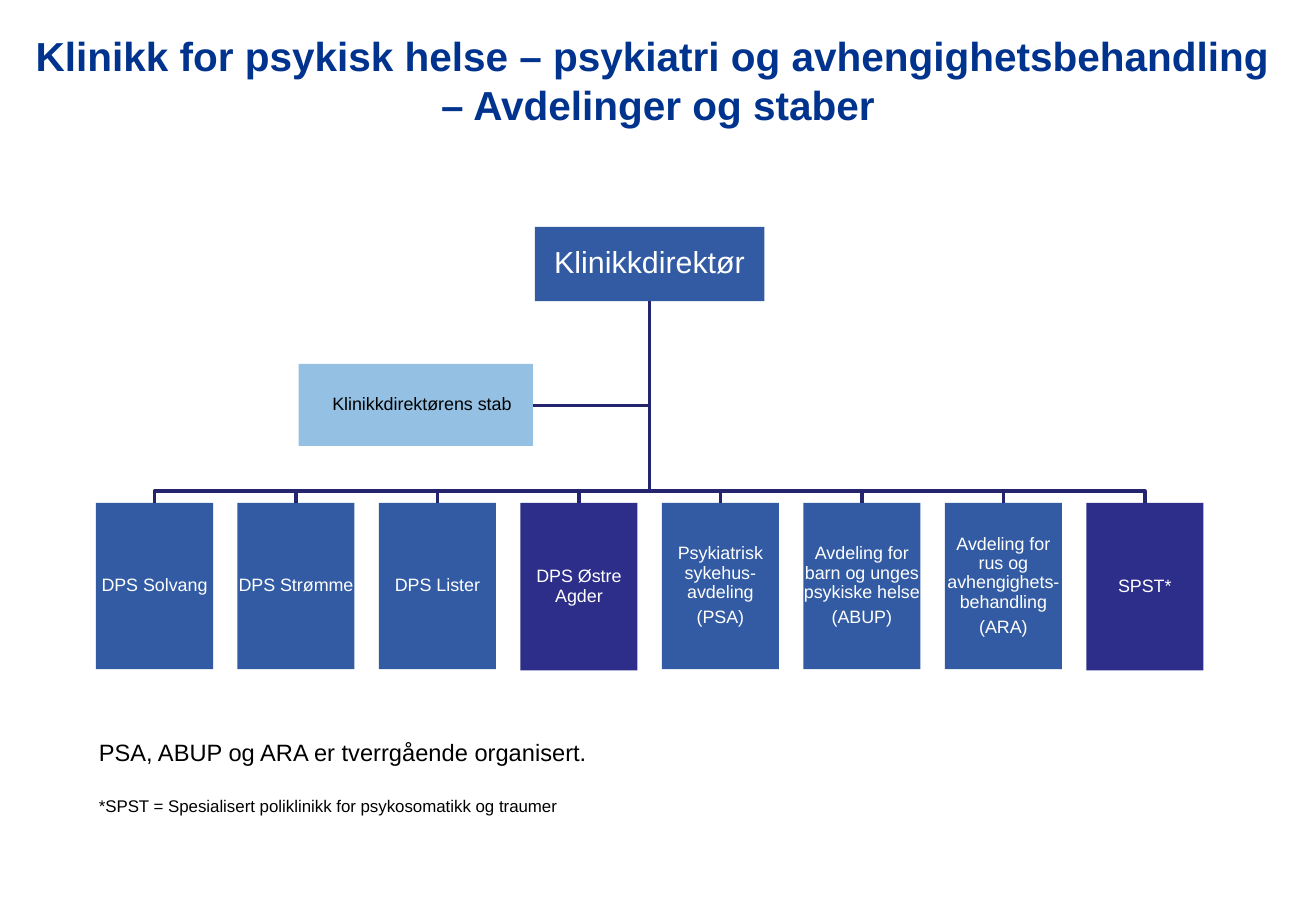
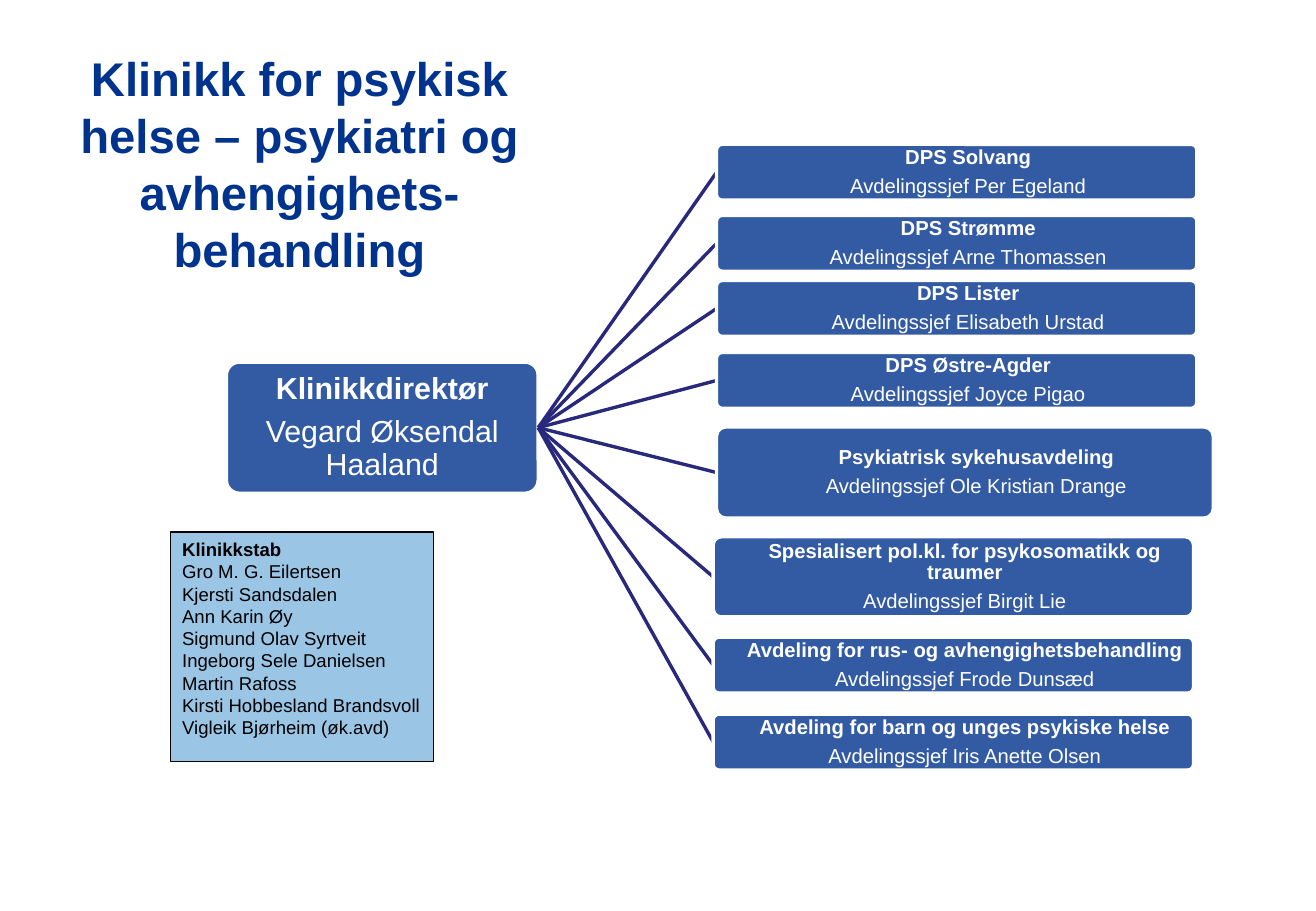
from lxml.etree import SubElement
from pptx import Presentation
from pptx.dml.color import RGBColor
from pptx.enum.shapes import MSO_CONNECTOR, MSO_SHAPE
from pptx.enum.text import MSO_ANCHOR, PP_ALIGN
from pptx.oxml.ns import qn
from pptx.util import Inches, Pt

SLIDE_WIDTH, SLIDE_HEIGHT = Inches(10.83), Inches(7.5)
FONT = "Arial"
COLORS = {
    "blue": "00338D", "violet": "2D2D8A", "sky": "7AB2DC",
    "tree": "24246F", "fan": "29297B", "white": "FFFFFF", "black": "000000",
}
SINGLE, TIGHT = 1.0, 0.9
AXIS = 49.37

DEPARTMENTS = [
    (["DPS Solvang"], "blue"),
    (["DPS Strømme"], "blue"),
    (["DPS Lister"], "blue"),
    (["DPS Østre Agder"], "violet"),
    (["Psykiatrisk sykehus-avdeling", "(PSA)"], "blue"),
    (["Avdeling for barn og unges psykiske helse", "(ABUP)"], "blue"),
    (["Avdeling for rus og avhengighets-behandling", "(ARA)"], "blue"),
    (["SPST*"], "violet"),
]
CHIEFS = [
    ("DPS Solvang", "Per Egeland", (54.45, 15.85, 36.5, 6.13)),
    ("DPS Strømme", "Arne Thomassen", (54.45, 23.65, 36.5, 6.13)),
    ("DPS Lister", "Elisabeth Urstad", (54.45, 30.8, 36.5, 6.13)),
    ("DPS Østre-Agder", "Joyce Pigao", (54.45, 38.7, 36.5, 6.13)),
    ("Psykiatrisk sykehusavdeling", "Ole Kristian Drange", (54.45, 46.87, 37.75, 10)),
    ("Spesialisert pol.kl. for psykosomatikk og traumer", "Birgit Lie",
     (54.2, 58.93, 36.5, 8.8)),
    ("Avdeling for rus- og avhengighetsbehandling", "Frode Dunsæd",
     (54.2, 69.95, 36.5, 6.13)),
    ("Avdeling for barn og unges psykiske helse", "Iris Anette Olsen",
     (54.2, 78.4, 36.5, 6.13)),
]
STAFF = [
    "Gro M. G. Eilertsen", "Kjersti Sandsdalen", "Ann Karin Øy",
    "Sigmund Olav Syrtveit", "Ingeborg Sele Danielsen", "Martin Rafoss",
    "Kirsti Hobbesland Brandsvoll", "Vigleik Bjørheim (øk.avd)",
]


def color(name):
    """Return a palette colour."""
    return RGBColor.from_string(COLORS[name])


def x(columns):
    """Turn hundredths of the slide width into a length."""
    return round(SLIDE_WIDTH * columns / 100)


def y(rows):
    """Turn hundredths of the slide height into a length."""
    return round(SLIDE_HEIGHT * rows / 100)


def place(area):
    """Turn a grid area into left, top, width and height."""
    left, top, width, height = area
    return x(left), y(top), x(width), y(height)


def write(paragraph, text, size, ink="black", bold=False, spacing=SINGLE,
          align=PP_ALIGN.LEFT, indent=0):
    """Fill one paragraph, breaking lines at newlines."""
    if indent:
        paragraph._p.get_or_add_pPr().set("marL", str(Inches(indent)))
    paragraph.alignment = align
    paragraph.line_spacing = spacing
    for number, line in enumerate(text.split("\n")):
        if number:
            paragraph.add_line_break()
        run = paragraph.add_run()
        run.text = line
        font = run.font
        font.name, font.size, font.bold = FONT, Pt(size), bold
        font.color.rgb = color(ink)


def paragraphs(frame, count):
    """Yield the given number of paragraphs of a fresh text frame."""
    yield frame.paragraphs[0]
    for _ in range(count - 1):
        yield frame.add_paragraph()


def add_text(slide, area):
    """Add a wrapping text box and return its frame."""
    frame = slide.shapes.add_textbox(*place(area)).text_frame
    frame.word_wrap = True
    return frame


def add_title(slide, text, area, size):
    """Add the slide title."""
    write(add_text(slide, area).paragraphs[0], text, size, "blue", True,
          align=PP_ALIGN.CENTER)


def add_panel(slide, area, fill, opacity=80, outline=None, weight=2,
              preset=MSO_SHAPE.RECTANGLE):
    """Add a filled shape without text."""
    panel = slide.shapes.add_shape(preset, *place(area))
    panel.shadow.inherit = False
    panel.fill.solid()
    panel.fill.fore_color.rgb = color(fill)
    if opacity < 100:
        tint = panel._element.spPr.find(".//" + qn("a:srgbClr"))
        SubElement(tint, qn("a:alpha")).set("val", str(opacity * 1000))
    if outline:
        panel.line.color.rgb = color(outline)
        panel.line.width = Pt(weight)
    else:
        panel.line.fill.background()
    return panel


def label(panel, lines, size, ink="white", indent=0, heading=False):
    """Centre lines in a panel, the first one bold if it is a heading."""
    frame = panel.text_frame
    frame.word_wrap = True
    frame.vertical_anchor = MSO_ANCHOR.MIDDLE
    frame.margin_left = frame.margin_right = 0
    frame.margin_top = frame.margin_bottom = Inches(0.01)
    for number, paragraph in enumerate(paragraphs(frame, len(lines))):
        write(paragraph, lines[number], size, ink, heading and number == 0,
              TIGHT, PP_ALIGN.CENTER, indent)
        paragraph.space_after = Pt(round(0.35 * size, 1))


def add_card(slide, area, lines, size, indent=0):
    """Add a rounded card with a bold heading."""
    card = add_panel(slide, area, "blue", outline="white",
                     preset=MSO_SHAPE.ROUNDED_RECTANGLE)
    card.adjustments[0] = 0.1
    label(card, lines, size, indent=indent, heading=True)


def add_line(slide, start, end, ink):
    """Connect two grid points."""
    line = slide.shapes.add_connector(
        MSO_CONNECTOR.STRAIGHT, x(start[0]), y(start[1]), x(end[0]), y(end[1]))
    line.line.color.rgb = color(ink)
    line.line.width = Pt(2)
    SubElement(line._element.spPr, qn("a:effectLst"))


def add_branch(slide, points):
    """Draw an angled branch of the tree through grid points."""
    start, *bends = [(x(column), y(row)) for column, row in points]
    builder = slide.shapes.build_freeform(*start)
    builder.add_line_segments(bends, close=False)
    branch = builder.convert_to_shape()
    branch.shadow.inherit = False
    branch.fill.background()
    branch.line.color.rgb = color("tree")
    branch.line.width = Pt(2)


def build_departments(slide):
    """Draw the tree of departments and staff."""
    add_title(slide, "Klinikk for psykisk helse – psykiatri og avhengighetsbehandling "
              "\n– Avdelinger og staber", (1.3, 2.8, 97.4, 11.6), 24)
    width, pitch, top, rail, root = 8.9, 10.75, 55.2, 53.9, 33.07
    first = AXIS - pitch * (len(DEPARTMENTS) - 1) / 2
    centers = [first + number * pitch for number in range(len(DEPARTMENTS))]
    add_branch(slide, [(AXIS, root), (AXIS, 44.5), (40.5, 44.5)])
    for center in reversed(centers):
        add_branch(slide, [(AXIS, root), (AXIS, rail), (center, rail), (center, top)])

    director = add_panel(slide, (AXIS - 8.73, 24.9, 17.45, 8.17), "blue")
    label(director, ["Klinikkdirektør"], 18)
    for center, (lines, fill) in zip(centers, DEPARTMENTS):
        height, opacity = (18.4, 100) if fill == "violet" else (18.25, 80)
        department = add_panel(
            slide, (center - width / 2, top, width, height), fill, opacity)
        label(department, lines, 10.6)
    staff = add_panel(slide, (22.7, 39.95, 17.8, 9), "sky")
    label(staff, ["Klinikkdirektørens stab"], 10.6, "black", 0.1)

    remark, footnote = paragraphs(add_text(slide, (6.6, 80.4, 59.4, 9.9)), 2)
    write(remark, "PSA, ABUP og ARA er tverrgående organisert.", 14)
    write(footnote, "*SPST = Spesialisert poliklinikk for psykosomatikk og traumer", 10)
    footnote.space_before = Pt(17)


def build_leaders(slide):
    """Draw the director, the chiefs and the staff list."""
    add_title(slide, "Klinikk for psykisk helse – psykiatri og avhengighets-behandling",
              (3.5, 4.8, 38.5, 23.1), 28)
    add_card(slide, (17.2, 39.75, 23.7, 14.4),
             ["Klinikkdirektør", "Vegard Øksendal Haaland"], 18)
    for unit, chief, area in CHIEFS:
        left, top, _, height = area
        add_line(slide, (40.9, 46.95), (left, top + height / 2), "fan")
        add_card(slide, area, [unit, f"Avdelingssjef {chief}"], 12, 0.19)

    staff = add_panel(slide, (12.93, 58.4, 20.04, 25.2), "sky", 75, "black", 0.75)
    frame = staff.text_frame
    frame.word_wrap = False
    frame.vertical_anchor = MSO_ANCHOR.TOP
    names = ["Klinikkstab"] + STAFF
    for number, paragraph in enumerate(paragraphs(frame, len(names))):
        write(paragraph, names[number], 11, bold=number == 0)


def main():
    """Build and save the presentation."""
    deck = Presentation()
    deck.slide_width, deck.slide_height = SLIDE_WIDTH, SLIDE_HEIGHT
    for build in (build_departments, build_leaders):
        build(deck.slides.add_slide(deck.slide_layouts[6]))
    deck.save("out.pptx")


if __name__ == "__main__":
    main()
